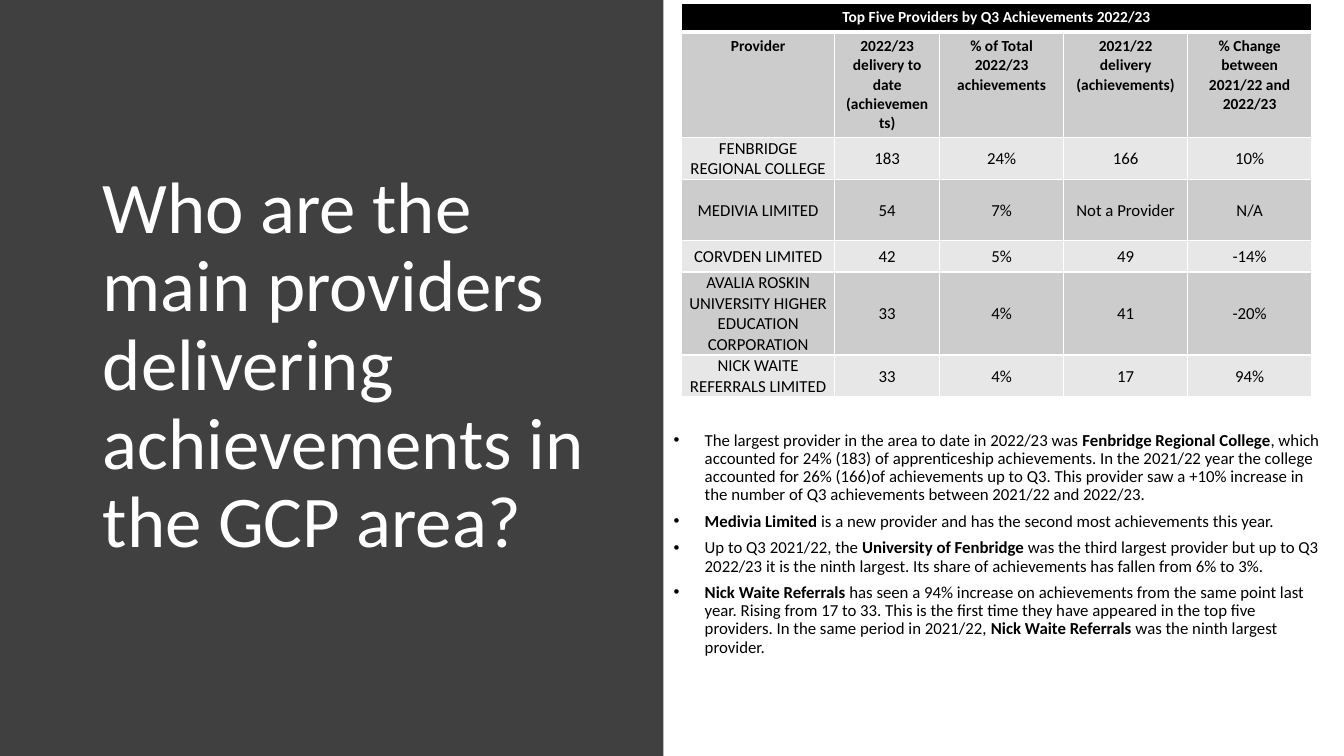
from dataclasses import dataclass
from lxml.etree import SubElement
from pptx import Presentation
from pptx.dml.color import RGBColor
from pptx.enum.shapes import MSO_SHAPE
from pptx.enum.text import MSO_ANCHOR, MSO_AUTO_SIZE, PP_ALIGN
from pptx.oxml import parse_xml
from pptx.oxml.ns import nsdecls, qn
from pptx.util import Inches, Pt


@dataclass
class Theme:
    font: str = "Calibri"
    panel: str = "404040"
    light: str = "FFFFFF"
    dark: str = "000000"
    odd: str = "CCCCCC"
    even: str = "E7E7E7"
    title: int = 52
    body: int = 12
    head: int = 11


class Deck:
    def __init__(self, theme):
        self.theme = theme
        self.file = Presentation()
        self.file.slide_width = Inches(13.33)
        self.file.slide_height = Inches(7.5)
        self.slide = self.file.slides.add_slide(self.file.slide_layouts[1])

    def place(self, shape, box):
        shape.left, shape.top, shape.width, shape.height = map(Inches, box)

    def style(self, run, size, color, bold=False):
        run.font.name = self.theme.font
        run.font.size = Pt(size)
        run.font.bold = bold
        run.font.color.rgb = RGBColor.from_string(color)

    def panel(self, box):
        shape = self.slide.shapes.add_shape(MSO_SHAPE.RECTANGLE, *map(Inches, box))
        shape.shadow.inherit = False
        shape.fill.solid()
        shape.fill.fore_color.rgb = RGBColor.from_string(self.theme.panel)
        shape.line.fill.background()
        self.slide.shapes._spTree.insert(2, shape._element)

    def frame(self, shape, box):
        self.place(shape, box)
        frame = shape.text_frame
        frame.word_wrap = True
        frame.auto_size = MSO_AUTO_SIZE.NONE
        frame.vertical_anchor = MSO_ANCHOR.MIDDLE
        return frame

    def title(self, text, box):
        frame = self.frame(self.slide.shapes.title, box)
        frame.text = text
        para = frame.paragraphs[0]
        para.alignment = PP_ALIGN.LEFT
        para.line_spacing = 0.9
        self.style(para.runs[0], self.theme.title, self.theme.light)

    def bullets(self, items, box):
        frame = self.frame(self.slide.placeholders[1], box)
        for index, item in enumerate(items):
            para = frame.paragraphs[0] if index == 0 else frame.add_paragraph()
            para.line_spacing = 0.9
            para.space_before = Pt(0)
            para.space_after = Pt(6)
            props = para._p.get_or_add_pPr()
            props.set("marL", str(Inches(0.38)))
            props.set("indent", str(Inches(-0.31)))
            SubElement(props, qn("a:buFont"), typeface="Arial")
            SubElement(props, qn("a:buChar"), char="•")
            for order, part in enumerate(item.split("*")):
                if part:
                    run = para.add_run()
                    run.text = part
                    self.style(run, self.theme.body, self.theme.dark, order % 2 == 1)

    def border(self, cell, top, base):
        props = cell._tc.get_or_add_tcPr()
        for index, (side, width) in enumerate(zip("LRTB", (1, 1, top, base))):
            line = parse_xml(
                f'<a:ln{side} {nsdecls("a")} w="{Pt(width)}"><a:solidFill>'
                f'<a:srgbClr val="{self.theme.light}"/></a:solidFill></a:ln{side}>'
            )
            props.insert(index, line)

    def cell(self, cell, text, row):
        theme = self.theme
        cell.text = text
        cell.fill.solid()
        fill = theme.dark if row == 0 else theme.odd if row % 2 else theme.even
        cell.fill.fore_color.rgb = RGBColor.from_string(fill)
        self.border(cell, 3 if row == 1 else 1, 3 if row == 0 else 1)
        if row > 1:
            cell.vertical_anchor = MSO_ANCHOR.MIDDLE
            cell.margin_left = cell.margin_right = cell.margin_top = Inches(0.01)
            cell.margin_bottom = 0
        para = cell.text_frame.paragraphs[0]
        para.alignment = PP_ALIGN.CENTER
        for run in para.runs:
            color = theme.dark if row else theme.light
            self.style(run, theme.body if row > 1 else theme.head, color, row < 2)

    def table(self, data, box, widths, heights):
        shape = self.slide.shapes.add_table(len(data), len(widths), *map(Inches, box))
        table = shape.table
        table.first_row = table.horz_banding = False
        for column, width in zip(table.columns, widths):
            column.width = Inches(width)
        for row, height in zip(table.rows, heights):
            row.height = Inches(height)
        self.place(shape, box)
        table.cell(0, 0).merge(table.cell(0, len(widths) - 1))
        for row, texts in enumerate(data):
            for column, text in enumerate(texts):
                self.cell(table.cell(row, column), text, row)


HEADING = "Who are the main providers delivering achievements in the GCP area?"

DATA = [
    ("Top Five Providers by Q3 Achievements 2022/23", "", "", "", ""),
    ("Provider", "2022/23 delivery to date (achievements)",
     "% of Total 2022/23 achievements", "2021/22 delivery (achievements)",
     "% Change between 2021/22 and 2022/23"),
    ("FENBRIDGE REGIONAL COLLEGE", "183", "24%", "166", "10%"),
    ("MEDIVIA LIMITED", "54", "7%", "Not a Provider", "N/A"),
    ("CORVDEN LIMITED", "42", "5%", "49", "-14%"),
    ("AVALIA ROSKIN UNIVERSITY HIGHER EDUCATION CORPORATION",
     "33", "4%", "41", "-20%"),
    ("NICK WAITE REFERRALS LIMITED", "33", "4%", "17", "94%"),
]

NOTES = [
    "The largest provider in the area to date in 2022/23 was *Fenbridge Regional "
    "College*, which accounted for 24% (183) of apprenticeship achievements. In the "
    "2021/22 year the college accounted for 26% (166)of achievements up to Q3. This "
    "provider saw a +10% increase in the number of Q3 achievements between 2021/22 "
    "and 2022/23.",
    "*Medivia Limited *is a new provider and has the second most achievements this "
    "year.",
    "Up to Q3 2021/22, the *University of Fenbridge *was the third largest provider "
    "but up to Q3 2022/23 it is the ninth largest. Its share of achievements has "
    "fallen from 6% to 3%.",
    "*Nick Waite Referrals *has seen a 94% increase on achievements from the same "
    "point last year. Rising from 17 to 33. This is the first time they have appeared "
    "in the top five providers. In the same period in 2021/22, *Nick Waite Referrals "
    "*was the ninth largest provider.",
]


def main():
    deck = Deck(Theme())
    deck.panel((0, 0, 6.58, 7.5))
    deck.title(HEADING, (0.92, 0.68, 5.24, 5.92))
    deck.bullets(NOTES, (6.51, 3.3, 6.76, 4.2))
    deck.table(DATA, (6.76, 0.03, 6.25, 3.85), (1.52, 1.04, 1.23, 1.23, 1.23),
               (0.25, 0.74, 0.31, 0.61, 0.31, 0.31, 0.31))
    deck.file.save("out.pptx")


if __name__ == "__main__":
    main()
